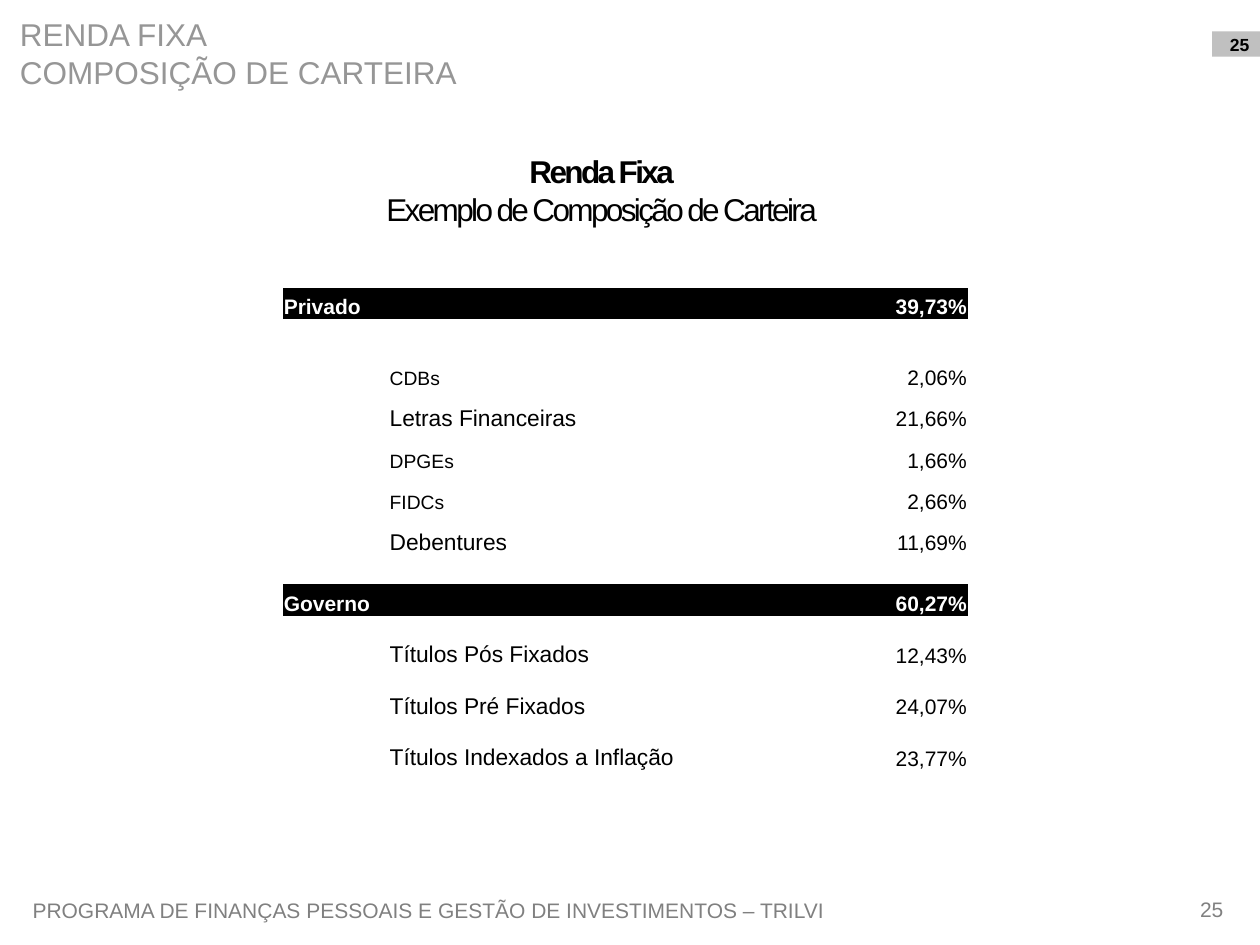
from typing import NamedTuple

from lxml import etree
from pptx import Presentation
from pptx.dml.color import RGBColor
from pptx.enum import shapes, text
from pptx.oxml import ns
from pptx.util import Pt

LEFT, MID, RIGHT = text.PP_ALIGN.LEFT, text.PP_ALIGN.CENTER, text.PP_ALIGN.RIGHT
PLAIN = "{2D5ABB26-0587-4C30-8999-92F81FD0307C}"  # table style without grid
BLACK, WHITE, GRAY = "000000", "FFFFFF", "808080"
PAD = (7.2, 3.6, 7.2, 3.6)


class Box(NamedTuple):
    lines: list[str]
    area: tuple[float, float, float, float]
    size: float
    color: str
    align: text.PP_ALIGN = LEFT
    pad: tuple[float, float, float, float] = PAD
    anchor: text.MSO_ANCHOR = text.MSO_ANCHOR.MIDDLE
    bold: bool = False
    fill: str = ""


class Row(NamedTuple):
    high: float
    label: str = ""
    value: str = ""
    size: float = 13
    head: bool = False


BOXES = [
    Box(["PROGRAMA DE FINANÇAS PESSOAIS E GESTÃO DE INVESTIMENTOS – TRILVI"],
        (11.5, 500.4, 478.8, 39.6), 12, GRAY),
    Box(["25"], (679.7, 512.6, 19.4, 14.4), 12, GRAY, RIGHT, (0, 0, 0, 0),
        text.MSO_ANCHOR.TOP),
    Box(["25"], (692.6, 18, 27.4, 14.4), 10, BLACK, MID, (7.2, 3.6, 2.9, 3.6),
        bold=True, fill="C0C0C0"),
    Box(["RENDA FIXA", "COMPOSIÇÃO DE CARTEIRA"], (4.3, 0, 266.4, 60.5), 18, "969696"),
]
COLS = [60.5, 60.5, 192.2, 78.5]
ROWS = [
    Row(18, "Privado", "39,73%", 12, True),
    Row(16.6),
    Row(23.7, "CDBs", "2,06%", 11),
    Row(23.7, "Letras Financeiras", "21,66%"),
    Row(23.7, "DPGEs", "1,66%", 11),
    Row(23.7, "FIDCs", "2,66%", 11),
    Row(23.7, "Debentures", "11,69%"),
    Row(16.6),
    Row(18, "Governo", "60,27%", 12, True),
    Row(29.5, "Títulos Pós Fixados", "12,43%"),
    Row(29.5, "Títulos Pré Fixados", "24,07%"),
    Row(29.5, "Títulos Indexados a Inflação", "23,77%"),
]


def rgb(code: str) -> RGBColor:
    return RGBColor.from_string(code)


def style(para, size: float, color: str, align=LEFT, bold=False) -> None:
    para.alignment = align
    font = para.font
    font.name, font.size, font.bold = "Arial", Pt(size), bold
    font.color.rgb = rgb(color)


def inset(item, pad) -> None:
    """Set the margins of a text frame or a table cell."""
    (item.margin_left, item.margin_top,
     item.margin_right, item.margin_bottom) = map(Pt, pad)


def draw_box(slide, box: Box):
    area = map(Pt, box.area)
    if box.fill:
        shape = slide.shapes.add_shape(shapes.MSO_SHAPE.RECTANGLE, *area)
        shape.shadow.inherit = False
        shape.fill.solid()
        shape.fill.fore_color.rgb = rgb(box.fill)
        shape.line.fill.background()
    else:
        shape = slide.shapes.add_textbox(*area)
    frame = shape.text_frame
    frame.word_wrap = True
    frame.vertical_anchor = box.anchor
    inset(frame, box.pad)
    frame.text = "\n".join(box.lines)
    for para in frame.paragraphs:
        style(para, box.size, box.color, box.align, box.bold)
    return shape


def draw_title(slide) -> None:
    box = Box([], (21.6, 82.8, 644.4, 51.1), 18, BLACK, MID)
    para = draw_box(slide, box).text_frame.paragraphs[0]
    first = para.add_run()
    first.text, first.font.bold = "Renda Fixa", True
    para.add_line_break()
    para.add_run().text = "Exemplo de Composição de Carteira"
    for run in para.runs:
        run.font._element.set("spc", "-150")


def fill_cell(cell, words: str, size: float, align, head: bool) -> None:
    inset(cell, (0.7, 0.7, 0.7, 0))
    cell.vertical_anchor = text.MSO_ANCHOR.BOTTOM
    if head:
        cell.fill.solid()
        cell.fill.fore_color.rgb = rgb(BLACK)
    else:
        cell.fill.background()
    para = cell.text_frame.paragraphs[0]
    para.text = words
    style(para, size, WHITE if head else BLACK, align, head)
    if not words:  # keeps empty rows from growing
        etree.SubElement(para._p, ns.qn("a:endParaRPr"), sz=str(size * 100))


def draw_table(slide) -> None:
    high = sum(row.high for row in ROWS)
    table = slide.shapes.add_table(len(ROWS), len(COLS), Pt(161.5), Pt(164.3),
                                   Pt(sum(COLS)), Pt(high)).table
    table.first_row = table.horz_banding = False
    table._tbl.tblPr.find(ns.qn("a:tableStyleId")).text = PLAIN
    for col, wide in zip(table.columns, COLS):
        col.width = Pt(wide)
    for r, row in enumerate(ROWS):
        table.rows[r].height = Pt(row.high)
        spot = 0 if row.head else 1
        for c in range(len(COLS)):
            words, size, align = "", 10, LEFT
            if row.label and c == spot:
                words, size = row.label, row.size
            elif row.value and c == len(COLS) - 1:
                words, size, align = row.value, 12, RIGHT
            fill_cell(table.cell(r, c), words, size, align, row.head)
        if row.head or row.size == 13 and row.label:
            table.cell(r, spot).merge(table.cell(r, spot + 1))


def main() -> None:
    deck = Presentation()
    deck.slide_width, deck.slide_height = Pt(720), Pt(540)
    slide = deck.slides.add_slide(deck.slide_layouts[6])
    for box in BOXES:
        draw_box(slide, box)
    draw_title(slide)
    draw_table(slide)
    deck.save("out.pptx")


if __name__ == "__main__":
    main()
